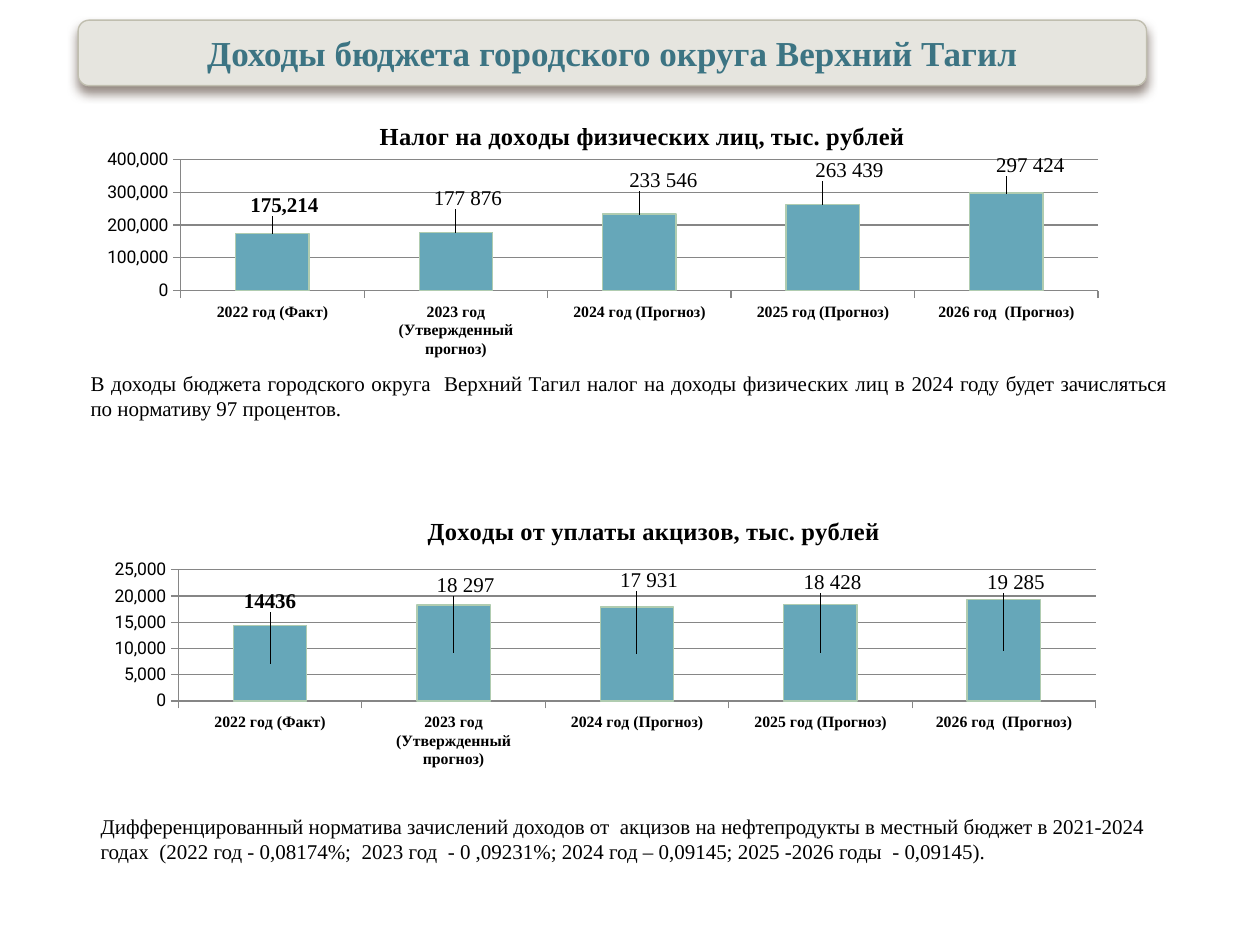
from lxml import etree
from pptx import Presentation
from pptx.chart.data import CategoryChartData as Data
from pptx.dml.color import RGBColor as RGB
from pptx.enum.chart import XL_CHART_TYPE as Kind, XL_LABEL_POSITION as Pos, XL_TICK_MARK as Tick
from pptx.enum.shapes import MSO_SHAPE as Shape
from pptx.enum.text import MSO_ANCHOR as Anchor, PP_ALIGN as Align
from pptx.oxml import parse_xml
from pptx.oxml.ns import nsdecls, qn
from pptx.util import Inches, Pt

hues = {"panel": "E6E5DF", "edge": "C0BEAF", "head": "3C7483", "shade": "4E3B30",
        "bar": "66A7B9", "rim": "B0CCB0", "grid": "868686", "ink": "000000"}
face = "Times New Roman"


def style(font, size, bold=False, hue="ink", name=face):
    font.size, font.bold, font.name = Pt(size), bold, name
    font.color.rgb = RGB.from_string(hues[hue])


def place(node, slot, **vals):
    old = node.find(qn("c:layout"))
    if old is not None:
        node.remove(old)
    lay = etree.Element(qn("c:layout"))
    box = etree.SubElement(lay, qn("c:manualLayout"))
    for key, val in vals.items():
        etree.SubElement(box, qn("c:" + key)).set("val", str(val))
    node.insert(slot, lay)


deck = Presentation()
deck.slide_width, deck.slide_height = Inches(10), Inches(7.5)
slide = deck.slides.add_slide(deck.slide_layouts[6])

head = slide.shapes.add_shape(Shape.ROUNDED_RECTANGLE, Inches(0.62), Inches(0.16), Inches(8.48), Inches(0.52))
head.fill.solid()
head.fill.fore_color.rgb = RGB.from_string(hues["panel"])
head.line.color.rgb = RGB.from_string(hues["edge"])
head.line.width = Pt(0.79)
head.shadow.inherit = False
glow = head._element.spPr.find(qn("a:effectLst"))
glow.append(parse_xml(
    f'<a:outerShdw {nsdecls("a")} blurRad="{Pt(6)}" dist="{Pt(4)}" dir="5400000" rotWithShape="0">'
    f'<a:srgbClr val="{hues["shade"]}"><a:alpha val="60000"/></a:srgbClr></a:outerShdw>'))
head.text_frame.vertical_anchor = Anchor.MIDDLE
para = head.text_frame.paragraphs[0]
para.alignment = Align.CENTER
para.space_after = Pt(10)
run = para.add_run()
run.text = "Доходы бюджета городского округа Верхний Тагил"
style(run.font, 20, True, "head")

years = ["2022 год (Факт)", "2023 год (Утвержденный прогноз)", "2024 год (Прогноз)",
         "2025 год (Прогноз)", "2026 год  (Прогноз)"]
charts = [
    (0.78, Kind.COLUMN_CLUSTERED, "Налог на доходы физических лиц, тыс. рублей", "#,##0", 400000, 100000,
     [175214, 177876, 233546, 263439, 297424],
     ["", "177 876", "233 546", " 263 439", "297 424"], Pos.OUTSIDE_END,
     [(0.01, -0.04), (0.01, -0.06), (0.02, -0.06), (0.02, -0.06), (0.02, -0.04)],
     (0.28, 0.06), (0.118, 0.208)),
    (3.91, Kind.COLUMN_STACKED, "Доходы от уплаты акцизов, тыс. рублей", "General", 25000, 5000,
     [14436, 18297, 17931, 18428, 19285],
     ["", "18 297", "17 931", "18 428", "19 285"], Pos.CENTER,
     [(0, -0.21), (0.01, -0.23), (0.01, -0.25), (0.01, -0.24), (0.01, -0.23)],
     (0.32, 0.06), (0.116, 0.262)),
]
for top, kind, name, form, peak, step, vals, tags, pos, moves, spot, area in charts:
    data = Data(number_format=form)
    data.categories = years
    data.add_series("Series 1", vals)
    chart = slide.shapes.add_chart(kind, Inches(0.31), Inches(top), Inches(9.53), Inches(2.34), data).chart
    style(chart.font, 18, name="Roboto")
    chart.has_legend = False
    chart.has_title = True
    run = chart.chart_title.text_frame.paragraphs[0].add_run()
    run.text = name
    style(run.font, 14, True)
    place(chart.chart_title._element, 1, xMode="edge", yMode="edge", x=spot[0], y=spot[1])
    place(chart._chartSpace.chart.plotArea, 0, layoutTarget="inner", xMode="edge", yMode="edge",
          x=area[0], y=area[1], w=0.764, h=0.445)

    cat, val = chart.category_axis, chart.value_axis
    style(cat.tick_labels.font, 9, True)
    style(val.tick_labels.font, 10, name="Roboto")
    val.tick_labels.number_format = "#,##0"
    val.tick_labels.number_format_is_linked = False
    val.minimum_scale, val.maximum_scale, val.major_unit = 0, peak, step
    val.has_major_gridlines = True
    for axis in (cat, val):
        axis.major_tick_mark = Tick.OUTSIDE
    for part in (cat, val, val.major_gridlines):
        part.format.line.color.rgb = RGB.from_string(hues["grid"])

    plot = chart.plots[0]
    plot.gap_width = 150
    plot.vary_by_categories = False
    bars = plot.series[0]
    bars.format.fill.solid()
    bars.format.fill.fore_color.rgb = RGB.from_string(hues["bar"])
    bars.format.line.color.rgb = RGB.from_string(hues["rim"])
    bars.format.line.width = Pt(0.79)
    marks = bars.data_labels
    marks.show_value = True
    marks.number_format = form
    marks.number_format_is_linked = False
    style(marks.font, 12, True)
    for i, tag in enumerate(tags):
        mark = bars.points[i].data_label
        if tag:
            run = mark.text_frame.paragraphs[0].add_run()
            run.text = tag
            style(run.font, 12)
        else:
            style(mark.font, 12, True)
        mark.position = pos
    for node, (x, y) in zip(bars._element.iter(qn("c:dLbl")), moves):
        place(node, 1, x=x, y=y)

notes = [
    (0.62, 2.89, 8.75, Align.JUSTIFY,
     "В доходы бюджета городского округа  Верхний Тагил налог на доходы физических лиц "
     "в 2024 году будет зачисляться по нормативу 97 процентов."),
    (0.7, 6.41, 8.83, Align.LEFT,
     "Дифференцированный норматива зачислений доходов от  акцизов на нефтепродукты в местный бюджет "
     "в 2021-2024 годах  (2022 год - 0,08174%;  2023 год  - 0 ,09231%; 2024 год – 0,09145; "
     "2025 -2026 годы  - 0,09145)."),
]
for left, top, wide, side, words in notes:
    frame = slide.shapes.add_textbox(Inches(left), Inches(top), Inches(wide), Inches(0.5)).text_frame
    frame.word_wrap = True
    para = frame.paragraphs[0]
    para.alignment = side
    run = para.add_run()
    run.text = words
    style(run.font, 12)

deck.save("out.pptx")
